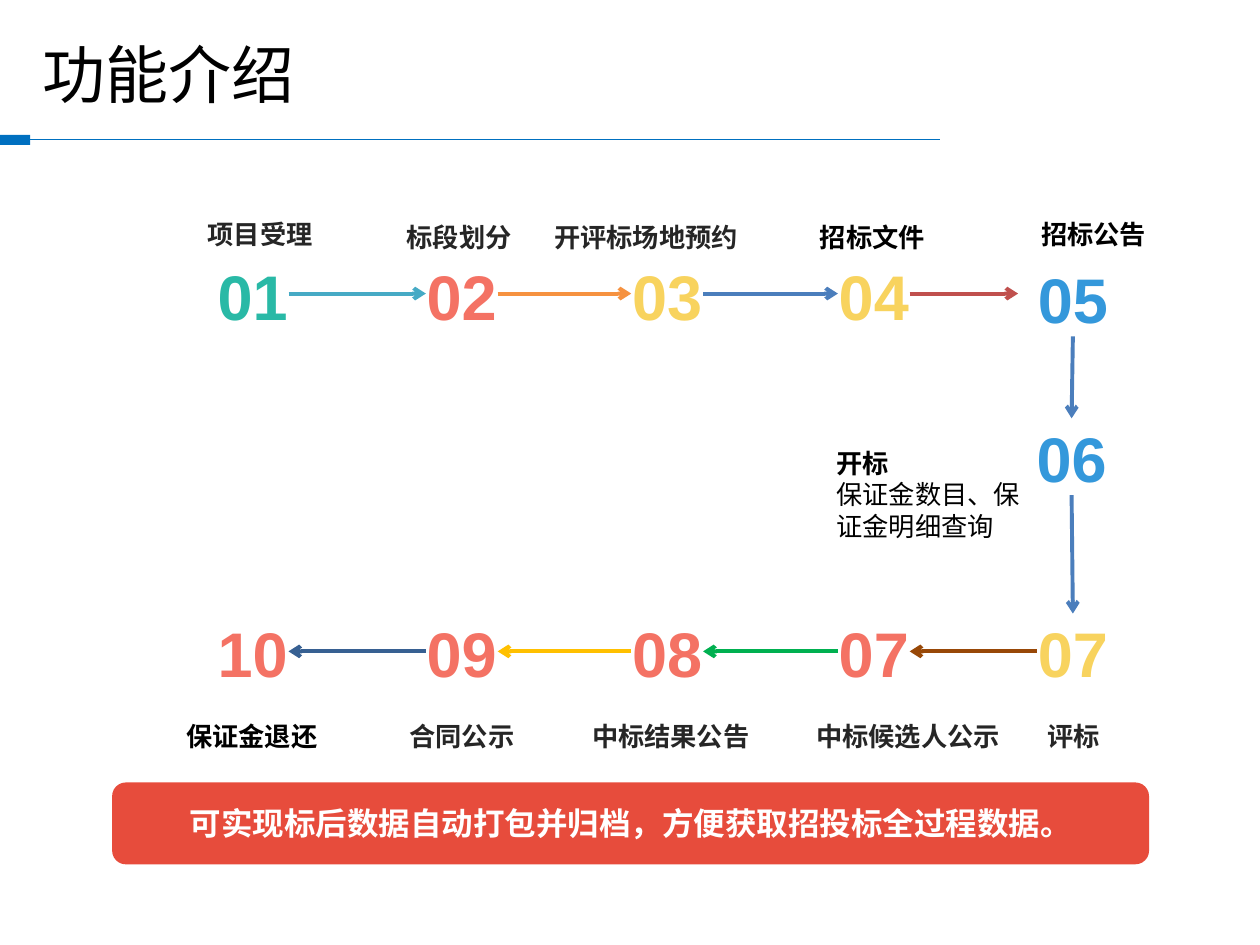
"""Build the tender workflow slide on a grid of 100 columns by 75 rows."""
from dataclasses import dataclass
from itertools import pairwise

import lxml.etree
import pptx
import pptx.dml.color
import pptx.enum.shapes
import pptx.enum.text
import pptx.oxml.ns
import pptx.util

ALIGN = pptx.enum.text.PP_ALIGN
ANCHOR = pptx.enum.text.MSO_ANCHOR
SHAPE = pptx.enum.shapes.MSO_SHAPE


@dataclass(frozen=True)
class Theme:
    accent: str = "0070C0"
    black: str = "000000"
    dark: str = "262626"
    white: str = "FFFFFF"
    banner: str = "E74C3C"
    teal: str = "29B9A6"
    coral: str = "F47264"
    yellow: str = "F8D35E"
    blue: str = "3498DB"
    arrow_blue: str = "4B7EBC"
    latin: str = "Arial"
    chinese: str = "Noto Sans CJK SC"
    large: int = 36
    medium: int = 18
    small: int = 15
    rule: float = 0.75
    arrow: float = 2.25


THEME = Theme()


@dataclass(frozen=True)
class Area:
    column: float
    row: float
    columns: float
    rows: float

    def lengths(self) -> list[int]:
        return [grid(value) for value in (self.column, self.row, self.columns, self.rows)]


@dataclass(frozen=True)
class Words:
    text: str
    colour: str = THEME.dark
    size: int = THEME.small
    bold: bool = True
    font: str = THEME.chinese


@dataclass(frozen=True)
class Label:
    area: Area
    lines: tuple[Words, ...]
    align: ALIGN = ALIGN.LEFT


@dataclass(frozen=True)
class Step:
    number: str
    colour: str
    column: float
    row: float
    arrow: str = ""
    gap: float = 0


TOP, BOTTOM, LABEL_TOP, LABEL_BOTTOM = 20.3, 48.7, 17.1, 56.7
NUMBER_COLUMNS, NUMBER_ROWS, LABEL_ROWS = 5.7, 6.1, 3.5
FIRST, SECOND, THIRD, FOURTH, FIFTH = 17.2, 33.8, 50.1, 66.5, 82.3

STEPS = (
    Step("01", THEME.teal, FIRST, TOP, "46AAC5"),
    Step("02", THEME.coral, SECOND, TOP, "F69240"),
    Step("03", THEME.yellow, THIRD, TOP, THEME.arrow_blue),
    Step("04", THEME.yellow, FOURTH, TOP, "C0504D", 1.5),
    Step("05", THEME.blue, FIFTH, 20.6, THEME.arrow_blue),
    Step("06", THEME.blue, 82.2, 33.2, THEME.arrow_blue),
    Step("07", THEME.yellow, FIFTH, BOTTOM, "984807"),
    Step("07", THEME.coral, FOURTH, BOTTOM, "00B050"),
    Step("08", THEME.coral, THIRD, BOTTOM, "FFC000"),
    Step("09", THEME.coral, SECOND, BOTTOM, "376092"),
    Step("10", THEME.coral, FIRST, BOTTOM),
)

LABELS = (
    Label(Area(15.5, 16.8, 12.5, LABEL_ROWS), (Words("项目受理"),)),
    Label(Area(31.3, LABEL_TOP, 10.6, LABEL_ROWS), (Words("标段划分"),)),
    Label(Area(43, LABEL_TOP, 17, LABEL_ROWS), (Words("开评标场地预约"),)),
    Label(Area(64.1, LABEL_TOP, 11.3, LABEL_ROWS), (Words("招标文件", THEME.black),)),
    Label(Area(77.8, 16.8, 18, LABEL_ROWS), (Words("招标公告", THEME.black),), ALIGN.CENTER),
    Label(Area(65.4, 35, 16.9, 8.6), (
        Words("开标", THEME.black),
        Words("保证金数目、保证金明细查询", THEME.black, bold=False),
    )),
    Label(Area(79.9, LABEL_BOTTOM, 10.6, LABEL_ROWS), (Words("评标"),), ALIGN.CENTER),
    Label(Area(63.8, LABEL_BOTTOM, 18.4, LABEL_ROWS), (Words("中标候选人公示"),)),
    Label(Area(46, LABEL_BOTTOM, 16.8, LABEL_ROWS), (Words("中标结果公告"),)),
    Label(Area(31.5, LABEL_BOTTOM, 14.5, LABEL_ROWS), (Words("合同公示"),)),
    Label(Area(13.8, LABEL_BOTTOM, 12.5, LABEL_ROWS), (Words("保证金退还", THEME.black),)),
)


def grid(units: float) -> int:
    """Turn grid units into a length."""
    return pptx.util.Inches(units / 10)


def rgb(colour: str) -> pptx.dml.color.RGBColor:
    """Turn a hexadecimal string into a colour."""
    return pptx.dml.color.RGBColor.from_string(colour)


def write(box, lines: tuple[Words, ...], align: ALIGN, anchor: ANCHOR) -> None:
    """Write one paragraph for each line of words."""
    frame = box.text_frame
    frame.word_wrap = True
    frame.vertical_anchor = anchor
    for index, words in enumerate(lines):
        para = frame.add_paragraph() if index else frame.paragraphs[0]
        para.alignment = align
        span = para.add_run()
        span.text = words.text
        span.font.size = pptx.util.Pt(words.size)
        span.font.bold = words.bold
        span.font.name = words.font
        span.font.color.rgb = rgb(words.colour)
        east_asian = lxml.etree.SubElement(span.font._element, pptx.oxml.ns.qn("a:ea"))
        east_asian.set("typeface", words.font)


def add_text(page, label: Label, anchor: ANCHOR = ANCHOR.TOP, inset: bool = True) -> None:
    """Add a text box, with or without insets."""
    box = page.shapes.add_textbox(*label.area.lengths())
    if not inset:
        frame = box.text_frame
        frame.margin_left = frame.margin_right = frame.margin_top = frame.margin_bottom = 0
    write(box, label.lines, label.align, anchor)


def add_block(page, kind: SHAPE, area: Area, colour: str):
    """Add a filled shape without outline or shadow."""
    block = page.shapes.add_shape(kind, *area.lengths())
    block.shadow.inherit = False
    block.fill.solid()
    block.fill.fore_color.rgb = rgb(colour)
    block.line.fill.background()
    return block


def add_line(page, ends: tuple[float, ...], colour: str, width: float, arrow: bool) -> None:
    """Add a straight line, with an optional arrowhead at its end."""
    kind = pptx.enum.shapes.MSO_CONNECTOR.STRAIGHT
    line = page.shapes.add_connector(kind, *map(grid, ends))
    line.line.color.rgb = rgb(colour)
    line.line.width = pptx.util.Pt(width)
    if arrow:
        head = lxml.etree.SubElement(line.line._get_or_add_ln(), pptx.oxml.ns.qn("a:tailEnd"))
        head.set("type", "arrow")
    lxml.etree.SubElement(line._element.spPr, pptx.oxml.ns.qn("a:effectLst"))


def arrow_ends(start: Step, end: Step) -> tuple[float, ...]:
    """Find where the arrow between two neighbouring steps begins and stops."""
    level = start.row + 3
    if end.column - start.column > NUMBER_COLUMNS:
        return start.column + NUMBER_COLUMNS, level, end.column - start.gap, level
    if start.column - end.column > NUMBER_COLUMNS:
        return start.column, level, end.column + NUMBER_COLUMNS, level
    half = NUMBER_COLUMNS / 2
    return start.column + half, start.row + NUMBER_ROWS, end.column + half, end.row


def main() -> None:
    """Build and save the slide."""
    deck = pptx.Presentation()
    deck.slide_width, deck.slide_height = grid(100), grid(75)
    page = deck.slides.add_slide(deck.slide_layouts[6])

    add_line(page, (74.6, 11.1, 2, 11.1), THEME.accent, THEME.rule, False)
    add_block(page, SHAPE.RECTANGLE, Area(0, 10.7, 2.4, 0.8), THEME.accent)
    title = Words("功能介绍", THEME.black, THEME.large, False)
    add_text(page, Label(Area(2.4, 2.1, 72.2, 7.5), (title,)), ANCHOR.MIDDLE)

    for step in STEPS:
        area = Area(step.column, step.row, NUMBER_COLUMNS, NUMBER_ROWS)
        number = Words(step.number, step.colour, THEME.large, font=THEME.latin)
        add_text(page, Label(area, (number,), ALIGN.CENTER), ANCHOR.BOTTOM, False)
    for label in LABELS:
        add_text(page, label)
    for start, end in pairwise(STEPS):
        add_line(page, arrow_ends(start, end), start.arrow, THEME.arrow, True)

    banner = add_block(page, SHAPE.ROUNDED_RECTANGLE, Area(8.9, 62.1, 82.3, 6.5), THEME.banner)
    message = Words("可实现标后数据自动打包并归档，方便获取招投标全过程数据。", THEME.white, THEME.medium)
    write(banner, (message,), ALIGN.CENTER, ANCHOR.MIDDLE)
    deck.save("out.pptx")


if __name__ == "__main__":
    main()
